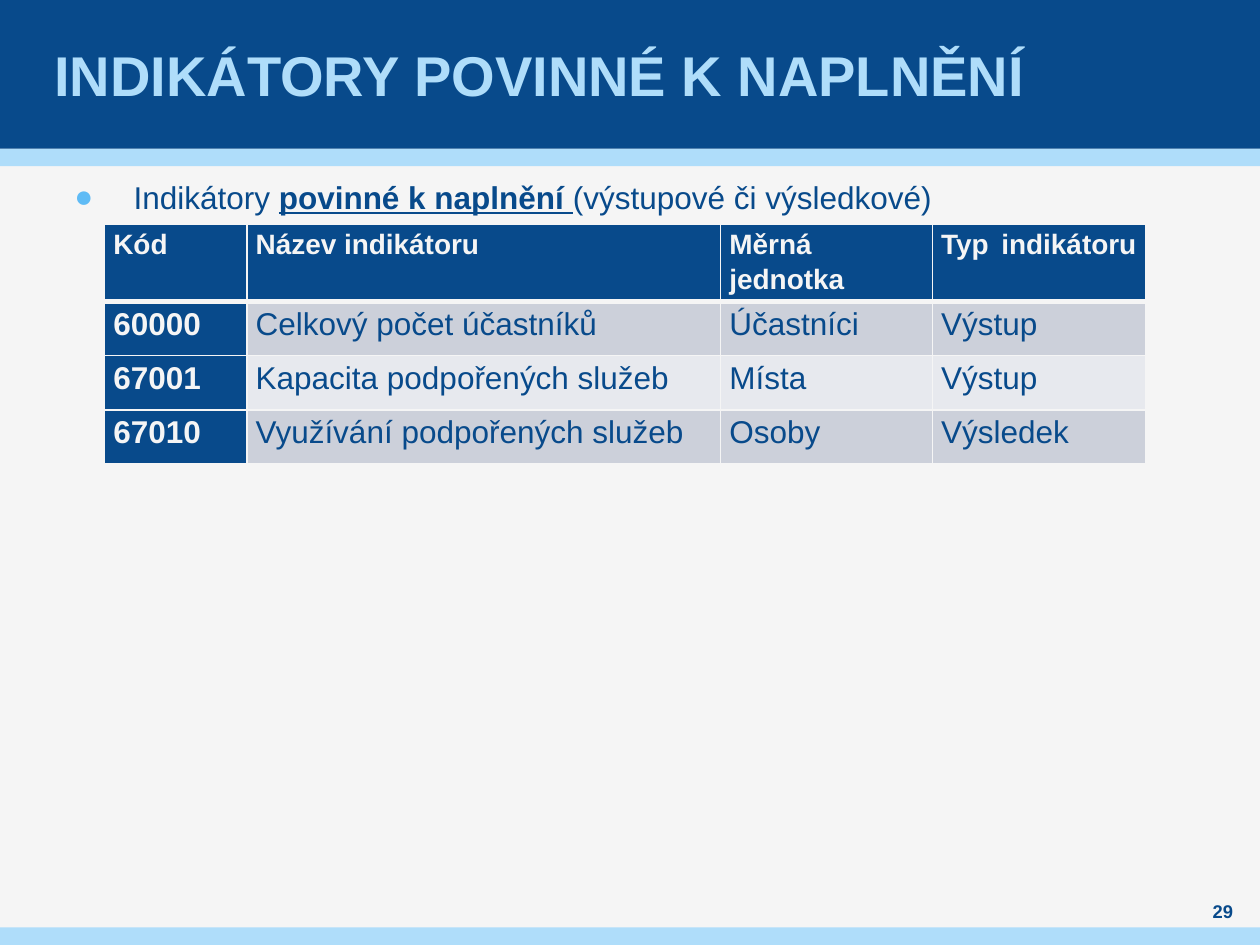
from lxml.etree import SubElement
from pptx import Presentation
from pptx.dml.color import RGBColor
from pptx.enum.shapes import MSO_SHAPE
from pptx.enum.text import MSO_ANCHOR, PP_ALIGN
from pptx.oxml.ns import qn
from pptx.util import Inches, Pt

# Content
TITLE = "INDIKÁTORY POVINNÉ K NAPLNĚNÍ"
LEAD = [("Indikátory ", False), ("povinné k\u00a0naplnění ", True),
        ("(výstupové či výsledkové)", False)]
PAGE = "29"
ROWS = [
    ("Kód", "Název indikátoru ", "Měrná jednotka ", "Typ indikátoru "),
    ("60000", "Celkový počet účastníků", "Účastníci", "Výstup"),
    ("67001", "Kapacita podpořených služeb", "Místa", "Výstup"),
    ("67010", "Využívání podpořených služeb", "Osoby", "Výsledek"),
]

# Look
NAVY, SKY, DOT, PALE = "084A8B", "AFDDFA", "5FBBF5", "F5F5F5"
BANDS = ["CCD0DA", "E7E9EE"]
BARS = [(1.18, 0.14, SKY), (0, 1.18, NAVY), (7.36, 0.14, SKY)]
COLS = [1.13, 3.76, 1.68, 1.69]
HEAD, ROW = 0.57, 0.43


def paint(fill, color):
    fill.solid()
    fill.fore_color.rgb = RGBColor.from_string(color)


def apply(item, **values):
    for name, value in values.items():
        setattr(item, name, value)


def write(para, text, size, color, bold=False, line=False):
    run = para.add_run()
    run.text = text
    apply(run.font, name="Arial", size=Pt(size), bold=bold, underline=line)
    paint(run.font.fill, color)


def add_box(slide, area, anchor, side=0):
    frame = slide.shapes.add_textbox(*map(Inches, area)).text_frame
    apply(frame, word_wrap=True, vertical_anchor=anchor,
          margin_left=Inches(side), margin_right=Inches(side),
          margin_top=0, margin_bottom=0)
    return frame.paragraphs[0]


def add_dot(para):
    props = para._p.get_or_add_pPr()
    props.set("marL", str(Inches(0.47)))
    props.set("indent", str(-Inches(0.47)))
    color = SubElement(props, qn("a:buClr"))
    SubElement(color, qn("a:srgbClr"), val=DOT)
    SubElement(props, qn("a:buFont"), typeface="Arial")
    SubElement(props, qn("a:buChar"), char="●")


def add_edges(cell, base):
    props = cell._tc.get_or_add_tcPr()
    widths = {"lnL": 1, "lnR": 1, "lnT": 1, "lnB": base}
    for spot, (tag, width) in enumerate(widths.items()):
        edge = SubElement(props, qn("a:" + tag), w=str(Pt(width)))
        fill = SubElement(edge, qn("a:solidFill"))
        SubElement(fill, qn("a:srgbClr"), val=PALE)
        props.insert(spot, edge)


def add_grid(slide):
    area = (0.83, 1.78, sum(COLS), HEAD + ROW * (len(ROWS) - 1))
    grid = slide.shapes.add_table(len(ROWS), len(COLS),
                                  *map(Inches, area)).table
    for col, width in zip(grid.columns, COLS):
        col.width = Inches(width)
    for r, texts in enumerate(ROWS):
        grid.rows[r].height = Inches(ROW if r else HEAD)
        for c, text in enumerate(texts):
            cell = grid.cell(r, c)
            label = r == 0 or c == 0
            apply(cell, margin_left=Inches(0.07), margin_right=Inches(0.07),
                  margin_top=0, margin_bottom=0)
            paint(cell.fill, NAVY if label else BANDS[(r - 1) % 2])
            add_edges(cell, 1 if r else 3)
            para = cell.text_frame.paragraphs[0]
            apply(para, line_spacing=1.15, space_after=Pt(6),
                  alignment=PP_ALIGN.LEFT if r else PP_ALIGN.JUSTIFY)
            write(para, text, 18 if r else 16, PALE if label else NAVY, label)


def main():
    deck = Presentation()
    apply(deck, slide_width=Inches(10), slide_height=Inches(7.5))
    slide = deck.slides.add_slide(deck.slide_layouts[6])
    paint(slide.background.fill, PALE)

    # Bands across the slide
    for top, high, color in BARS:
        bar = slide.shapes.add_shape(MSO_SHAPE.RECTANGLE, 0, Inches(top),
                                     deck.slide_width, Inches(high))
        bar.shadow.inherit = False
        bar.line.fill.background()
        paint(bar.fill, color)

    # Title
    para = add_box(slide, (0.39, 0, 9.21, 1.18), MSO_ANCHOR.MIDDLE, 0.04)
    write(para, TITLE, 32, SKY, True)

    # Lead line
    para = add_box(slide, (0.59, 1.31, 8.82, 5.38), MSO_ANCHOR.TOP)
    apply(para, line_spacing=Pt(28.8), space_before=Pt(6), space_after=Pt(6))
    add_dot(para)
    for text, strong in LEAD:
        write(para, text, 18, NAVY, strong, strong)

    # Page number
    para = add_box(slide, (9.45, 7.13, 0.51, 0.2), MSO_ANCHOR.MIDDLE)
    para.alignment = PP_ALIGN.CENTER
    write(para, PAGE, 10.5, NAVY, True)

    # Table
    add_grid(slide)
    deck.save("out.pptx")


if __name__ == "__main__":
    main()
